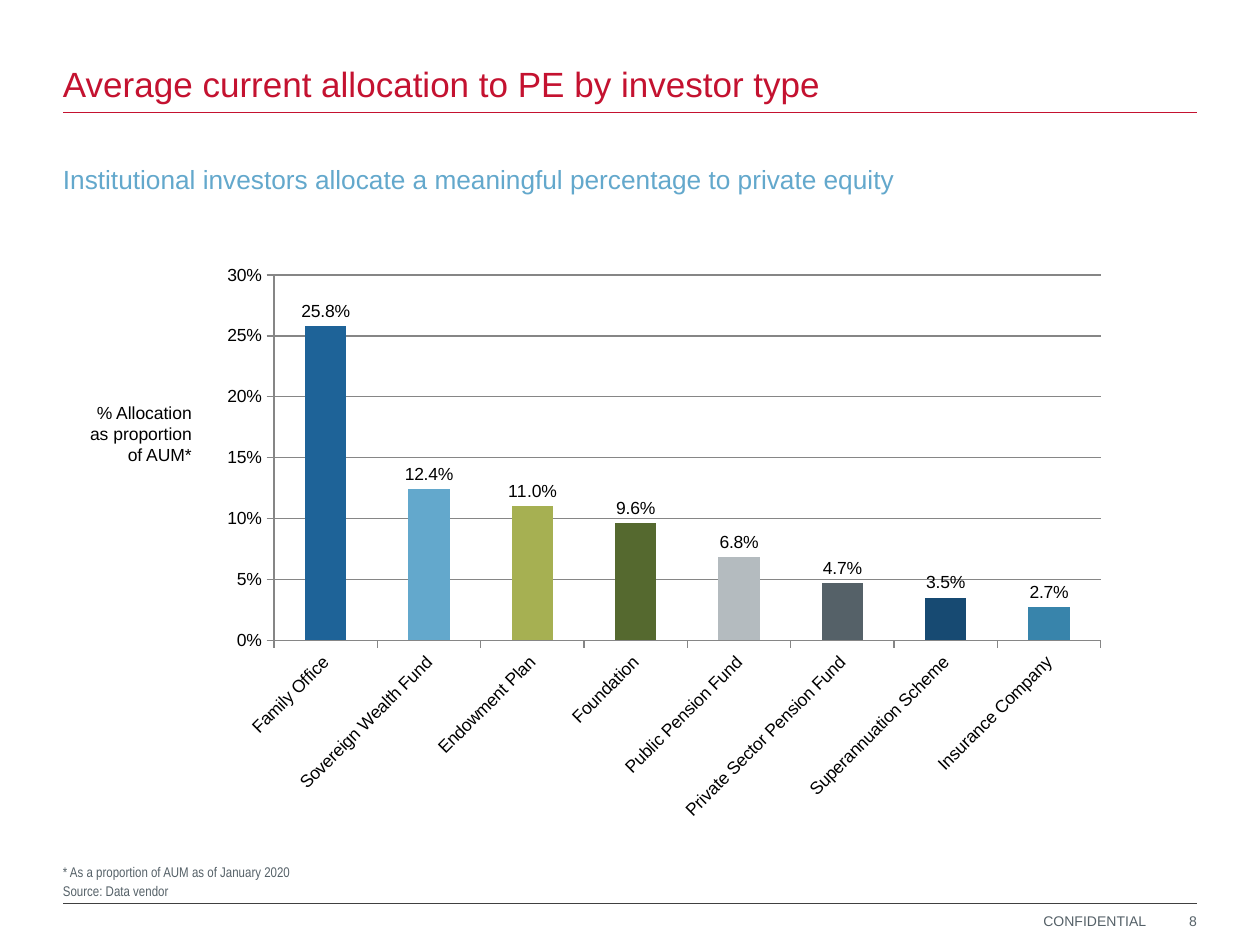
from lxml import etree
from pptx import Presentation
from pptx.chart.data import CategoryChartData
from pptx.dml.color import RGBColor
from pptx.enum.chart import XL_CHART_TYPE, XL_LABEL_POSITION, XL_TICK_MARK
from pptx.enum.text import MSO_ANCHOR, PP_ALIGN
from pptx.oxml.ns import qn
from pptx.util import Inches, Pt

COLUMN = XL_CHART_TYPE.COLUMN_CLUSTERED
ABOVE = XL_LABEL_POSITION.OUTSIDE_END
TICK = XL_TICK_MARK.OUTSIDE
TOP, MIDDLE, BOTTOM = MSO_ANCHOR.TOP, MSO_ANCHOR.MIDDLE, MSO_ANCHOR.BOTTOM
LEFT, RIGHT = PP_ALIGN.LEFT, PP_ALIGN.RIGHT

WIDE, HIGH, EDGE = 10, 7.5, 0.5
FULL = WIDE - 2 * EDGE
RED, BLUE, SLATE, BLACK, GRID = "C41230", "63A8CC", "556168", "000000", "868686"

TITLE = "Average current allocation to PE by investor type"
LEAD = "Institutional investors allocate a meaningful percentage to private equity"
NOTES = ["* As a proportion of AUM as of January 2020", "Source: Data vendor"]
AXIS = "% Allocation as proportion of AUM*"
BARS = [
    ("Family Office", 0.258, "1E6398"),
    ("Sovereign Wealth Fund", 0.124, BLUE),
    ("Endowment Plan", 0.11, "A6B052"),
    ("Foundation", 0.096, "55692F"),
    ("Public Pension Fund", 0.068, "B4BBBF"),
    ("Private Sector Pension Fund", 0.047, SLATE),
    ("Superannuation Scheme", 0.035, "174A72"),
    ("Insurance Company", 0.027, "3884AB"),
]
RULES = [(0.89, RED), (7.17, "404040")]
PLOT = {"x": 0.07, "y": 0.04, "w": 0.91, "h": 0.63}  # shares of the chart


def color(code):
    return RGBColor.from_string(code)


def style(font, size, code=BLACK, face="Arial"):
    font.size, font.name, font.bold = Pt(size), face, False
    font.color.rgb = color(code)


def write(slide, area, lines, size, code, face="Arial", anchor=TOP,
          align=LEFT, pad=(0, 0), wrap=True, lead=None):
    """Add a text box; pad is its side and its top and bottom inset."""
    frame = slide.shapes.add_textbox(*map(Inches, area)).text_frame
    frame.word_wrap, frame.vertical_anchor = wrap, anchor
    frame.margin_left = frame.margin_right = Inches(pad[0])
    frame.margin_top = frame.margin_bottom = Inches(pad[1])
    frame.text = "\n".join(lines)
    for spot, para in enumerate(frame.paragraphs):
        para.alignment = align
        if lead:
            para.line_spacing = lead
        if spot:
            para.space_before = Pt(0.2 * size)
        for run in para.runs:
            style(run.font, size, code, face)


def rule(slide, top, code):
    line = slide.shapes.add_connector(
        1, Inches(EDGE), Inches(top), Inches(EDGE + FULL), Inches(top))
    line.line.color.rgb, line.line.width = color(code), Pt(0.5)
    etree.SubElement(line._element.spPr, qn("a:effectLst"))


def place(chart):
    """Fix the inner plot area inside the chart."""
    plot = chart._chartSpace.chart.plotArea
    for old in plot.findall(qn("c:layout")):
        plot.remove(old)
    layout = etree.Element(qn("c:layout"))
    box = etree.SubElement(layout, qn("c:manualLayout"))
    parts = [("layoutTarget", "inner"), ("xMode", "edge"), ("yMode", "edge")]
    for name, val in parts + list(PLOT.items()):
        etree.SubElement(box, qn("c:" + name)).set("val", str(val))
    plot.insert(0, layout)


def draw(slide, area):
    data = CategoryChartData(number_format="0.0%")
    data.categories = [name for name, _, _ in BARS]
    data.add_series("Series 1", [val for _, val, _ in BARS])
    chart = slide.shapes.add_chart(COLUMN, *map(Inches, area), data).chart
    chart.has_legend = chart.has_title = False
    style(chart.font, 10)

    plot = chart.plots[0]
    plot.gap_width, plot.vary_by_categories = 150, False
    for spot, (_, _, code) in enumerate(BARS):
        fill = plot.series[0].points[spot].format.fill
        fill.solid()
        fill.fore_color.rgb = color(code)
    plot.has_data_labels = True
    labels = plot.data_labels
    labels.show_value, labels.position = True, ABOVE
    labels.number_format, labels.number_format_is_linked = "0.0%", False
    style(labels.font, 10)

    cats, vals = chart.category_axis, chart.value_axis
    vals.minimum_scale, vals.maximum_scale, vals.major_unit = 0, 0.3, 0.05
    vals.has_major_gridlines = True
    vals.tick_labels.number_format = "0%"
    vals.tick_labels.number_format_is_linked = False
    for axis in (cats, vals):
        axis.major_tick_mark = TICK
        style(axis.tick_labels.font, 10)
    for part in (cats, vals, vals.major_gridlines):
        part.format.line.color.rgb = color(GRID)
        part.format.line.width = Pt(0.75)
    body = cats._element.find(qn("c:txPr")).find(qn("a:bodyPr"))
    body.set("rot", str(-45 * 60000))
    body.set("vert", "horz")
    place(chart)


def main():
    deck = Presentation()
    deck.slide_width, deck.slide_height = Inches(WIDE), Inches(HIGH)
    slide = deck.slides.add_slide(deck.slide_layouts[6])
    for top, code in RULES:
        rule(slide, top, code)
    write(slide, (EDGE, 0.11, 7.34, 0.78), [TITLE], 20, RED,
          anchor=BOTTOM, pad=(0, 0.05), lead=0.95)
    write(slide, (EDGE, 1.3, FULL, 0.3), [LEAD], 15, BLUE)
    draw(slide, (1.67, 2, 7.21, 4.6))
    write(slide, (0.58, 3.14, 1.04, 0.61), [AXIS], 10, BLACK,
          align=RIGHT, pad=(0.1, 0.05))
    write(slide, (EDGE, 6.5, FULL, 0.64), NOTES, 8, SLATE,
          face="Arial Narrow", anchor=BOTTOM)
    write(slide, (8.28, 7.24, 0.82, 0.13), ["CONFIDENTIAL"], 8, SLATE, wrap=False)
    write(slide, (8.78, 7.22, 0.72, 0.18), ["8"], 8, SLATE,
          anchor=MIDDLE, align=RIGHT)
    deck.save("out.pptx")


if __name__ == "__main__":
    main()
